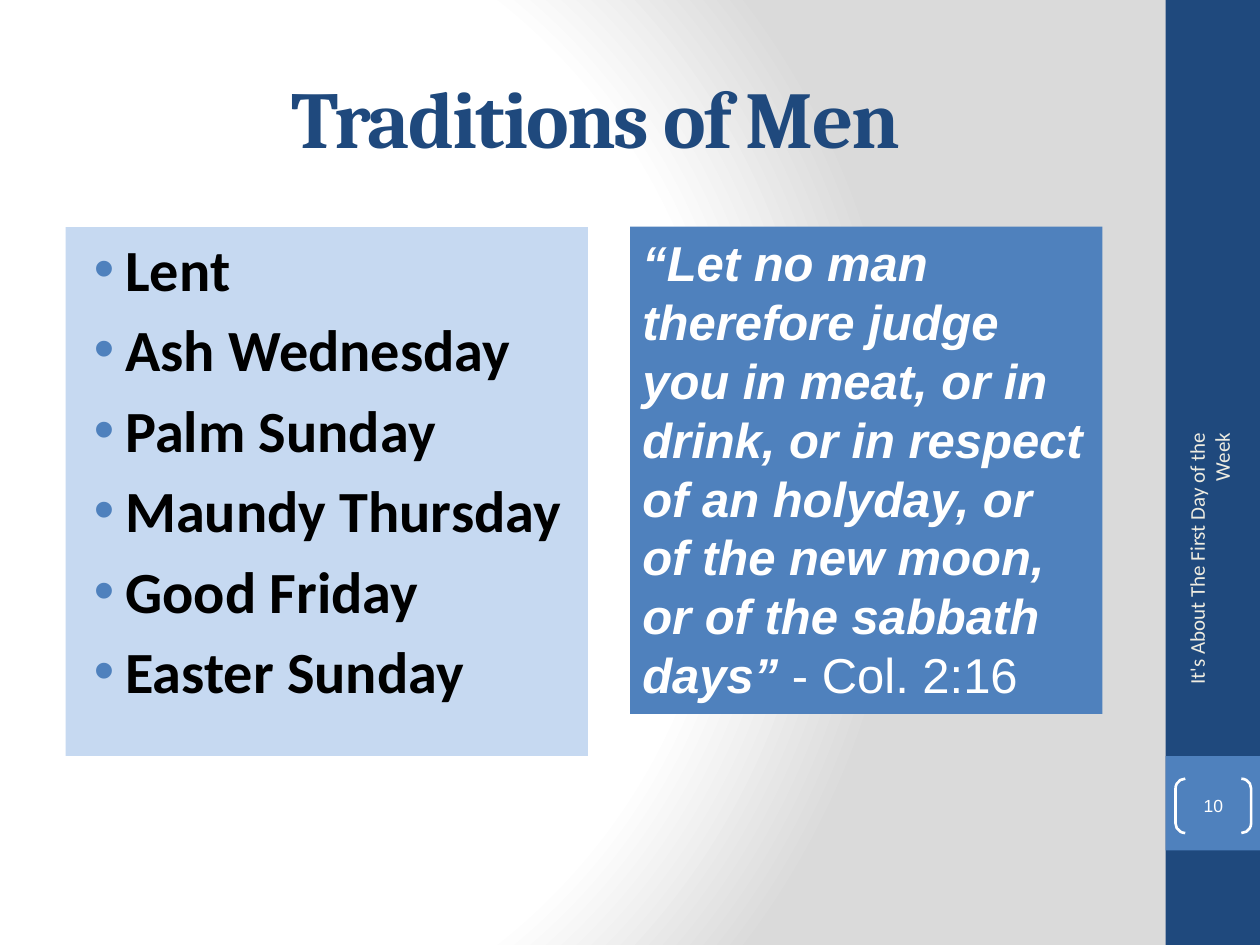
from lxml import etree
from pptx import Presentation
from pptx.dml.color import RGBColor
from pptx.enum.shapes import MSO_SHAPE
from pptx.enum.text import MSO_ANCHOR, PP_ALIGN
from pptx.oxml import parse_xml
from pptx.oxml.ns import nsdecls, qn
from pptx.util import Pt

RECT, BRACKETS = MSO_SHAPE.RECTANGLE, MSO_SHAPE.DOUBLE_BRACKET
TOP, MIDDLE = MSO_ANCHOR.TOP, MSO_ANCHOR.MIDDLE
LEFT, CENTER, RIGHT = PP_ALIGN.LEFT, PP_ALIGN.CENTER, PP_ALIGN.RIGHT

COLORS = {
    "navy": "1F497D", "blue": "4F81BD", "pale": "C6D9F1", "white": "FFFFFF",
    "gray": "DADADA", "cream": "EEECE1", "black": "000000",
}


def rgb(name):
    return RGBColor.from_string(COLORS[name])


def add_run(p, text, font="Calibri", size=12, color="white",
            bold=False, italic=False, spacing=None):
    r = p.add_run()
    r.text = text
    f = r.font
    f.name, f.size, f.bold, f.italic = font, Pt(size), bold, italic
    f.color.rgb = rgb(color)
    if spacing is not None:
        r._r.get_or_add_rPr().set("spc", str(spacing * 100))


class Deck:
    def __init__(self, width, height):
        self.prs = Presentation()
        self.prs.slide_width, self.prs.slide_height = Pt(width), Pt(height)
        self.s = self.prs.slides.add_slide(self.prs.slide_layouts[6])

    def background(self, stops):
        gs = "".join(f'<a:gs pos="{pos * 1000}"><a:srgbClr val="{COLORS[c]}"/></a:gs>'
                     for pos, c in stops)
        bg = parse_xml(
            f'<p:bg {nsdecls("p", "a")}><p:bgPr><a:gradFill rotWithShape="1">'
            f'<a:gsLst>{gs}</a:gsLst><a:path path="circle">'
            '<a:fillToRect l="20000" t="50000" r="100000" b="50000"/></a:path>'
            '</a:gradFill><a:effectLst/></p:bgPr></p:bg>')
        self.s._element.cSld.insert(0, bg)

    def shape(self, kind, x, y, w, h, fill=None, line=None):
        sp = self.s.shapes.add_shape(kind, Pt(x), Pt(y), Pt(w), Pt(h))
        sp.shadow.inherit = False
        if fill:
            sp.fill.solid()
            sp.fill.fore_color.rgb = rgb(fill)
        else:
            sp.fill.background()
        if line:
            sp.line.color.rgb = rgb(line)
            sp.line.width = Pt(1.5)
        else:
            sp.line.fill.background()
        return sp

    def textbox(self, x, y, w, h):
        return self.s.shapes.add_textbox(Pt(x), Pt(y), Pt(w), Pt(h))

    def paragraph(self, sp, runs, align=LEFT, anchor=TOP, first=True, before=0):
        tf = sp.text_frame
        tf.word_wrap, tf.vertical_anchor = True, anchor
        p = tf.paragraphs[0] if first else tf.add_paragraph()
        p.alignment, p.space_before = align, Pt(before)
        for text, style in runs:
            add_run(p, text, **style)
        return p

    def bullets(self, sp, items, **style):
        for i, item in enumerate(items):
            p = self.paragraph(sp, [(item, style)], first=i == 0, before=6)
            pPr = p._p.get_or_add_pPr()
            pPr.set("marL", str(Pt(27)))
            pPr.set("indent", str(Pt(-18)))
            clr = etree.SubElement(pPr, qn("a:buClr"))
            etree.SubElement(clr, qn("a:srgbClr"), val=COLORS["blue"])
            etree.SubElement(pPr, qn("a:buFont"), typeface="Arial")
            etree.SubElement(pPr, qn("a:buChar"), char="•")


def main():
    deck = Deck(720, 540)
    deck.background([(0, "white"), (75, "white"), (100, "gray")])

    # Side band with the slide number
    deck.shape(RECT, 666, 0, 54, 540, fill="navy")
    deck.shape(RECT, 666, 432, 54, 54, fill="blue")
    number = deck.shape(BRACKETS, 671.75, 445, 43.2, 31, line="white")
    number.adjustments[0] = 0.18
    tf = number.text_frame
    tf.margin_left = tf.margin_right = tf.margin_top = tf.margin_bottom = 0
    deck.paragraph(number, [("10", dict(font="Arial", size=10))], CENTER, MIDDLE)

    # Title
    title = deck.textbox(36, 21.6, 600, 90)
    deck.paragraph(title, [(" Traditions of Men", dict(
        font="Cambria", size=46, color="navy", bold=True, spacing=-1))], CENTER, MIDDLE)

    # List of traditions
    days = deck.shape(RECT, 37.5, 129.75, 298.5, 302.25, fill="pale")
    deck.bullets(days, ["Lent", "Ash Wednesday", "Palm Sunday", "Maundy Thursday",
                        "Good Friday", "Easter Sunday"],
                 size=33.3, color="black", bold=True)

    # Quotation
    quote = deck.shape(RECT, 360, 129.5, 270, 278.5, fill="blue")
    body = dict(font="Arial", size=28)
    deck.paragraph(quote, [
        ("“Let no man therefore judge you in meat, or in drink, or in respect of an "
         "holyday, or of the new moon, or of the sabbath days” ",
         dict(body, bold=True, italic=True)),
        ("- Col. 2:16", body)])

    # Footer running up the band
    footer = deck.textbox(597.6, 319, 186.5, 28.8)
    footer.rotation = 270
    deck.paragraph(footer, [("It's About The First Day of the Week",
                             dict(color="cream"))], RIGHT, MIDDLE)

    deck.prs.save("out.pptx")


if __name__ == "__main__":
    main()
